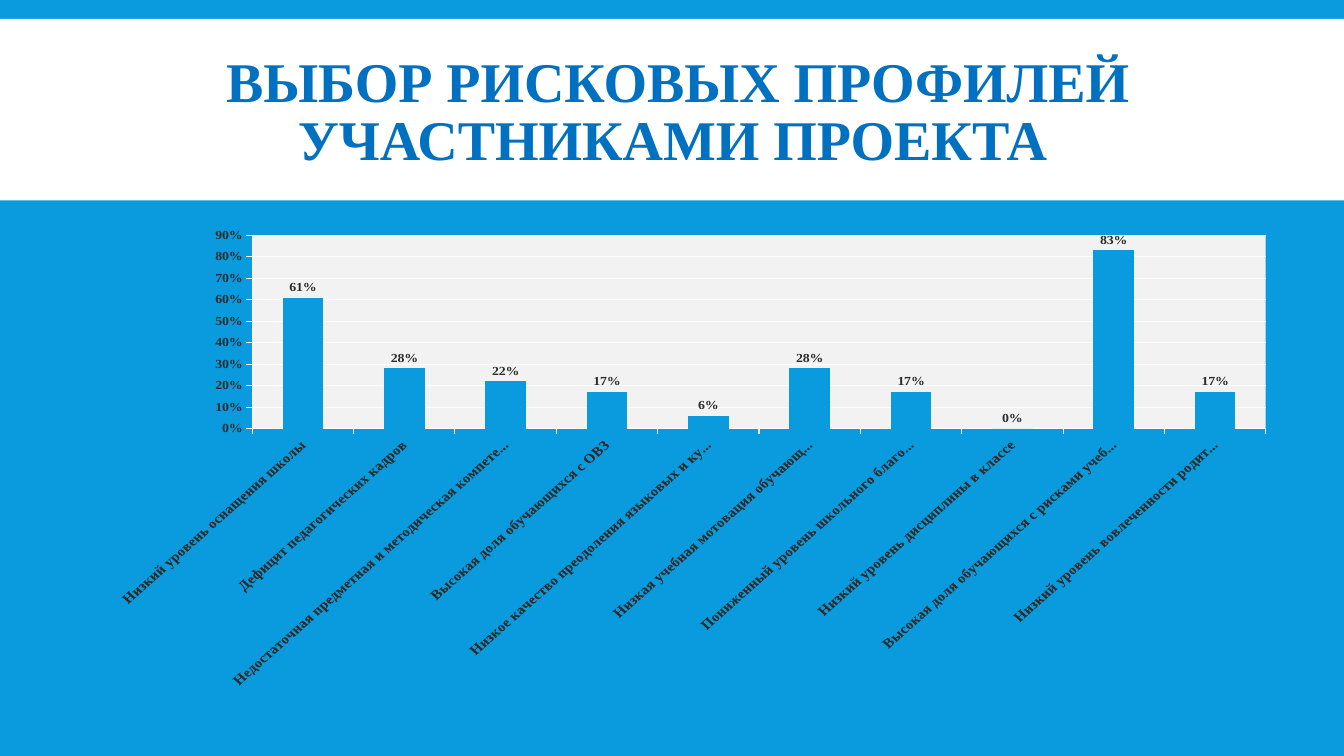
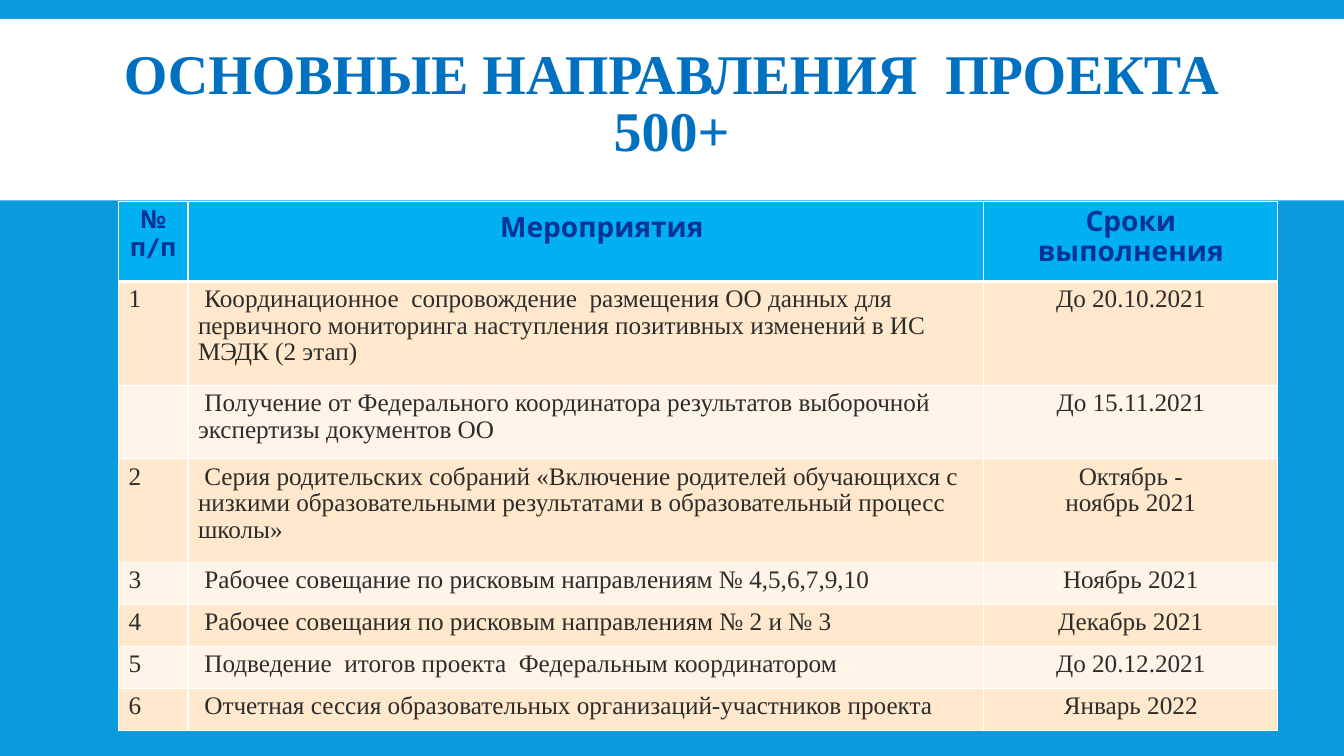
from dataclasses import dataclass
from typing import Any, NamedTuple

from lxml.etree import SubElement
from pptx import Presentation
from pptx.chart.data import CategoryChartData
from pptx.dml.color import RGBColor as Rgb
from pptx.enum.chart import XL_CHART_TYPE as ChartType
from pptx.enum.chart import XL_LABEL_POSITION as LabelPosition
from pptx.enum.chart import XL_TICK_MARK as TickMark
from pptx.enum.shapes import MSO_SHAPE as Preset
from pptx.enum.text import MSO_ANCHOR as Anchor
from pptx.enum.text import PP_ALIGN as Align
from pptx.oxml import parse_xml
from pptx.oxml.ns import nsdecls, qn
from pptx.util import Emu, Pt

EMU_PER_PX = 9525
BLANK_LAYOUT = 6


@dataclass(frozen=True)
class Theme:
    blue: str = "099BDD"
    white: str = "FFFFFF"
    title: str = "0070C0"
    ink: str = "2C2C2C"
    plot: str = "F2F2F2"
    header_fill: str = "00B0F0"
    header_ink: str = "003399"
    bands: tuple[str, str] = ("FFE8CC", "FFF4E7")
    serif: str = "Times New Roman"
    sans: str = "Cabin"
    title_size: int = 40
    heading_size: int = 20
    body_size: int = 18
    category_size: int = 11
    chart_size: int = 10
    title_spacing: float = 0.85
    header_spacing: float = 0.9
    body_spacing: float = 0.95


class Box(NamedTuple):
    left: int
    top: int
    width: int
    height: int


class Risk(NamedTuple):
    name: str
    share: float


class Activity(NamedTuple):
    number: str
    task: str
    term: str


class Heading(NamedTuple):
    text: str
    size: int
    margins: dict[str, int]


THEME = Theme()
SLIDE = Box(0, 0, 1280, 720)
BAND = Box(0, 18, 1280, 173)
CHART = Box(113, 200, 1093, 455)
TABLE = Box(113, 192, 1104, 504)
COLUMN_WIDTHS = (66, 758, 280)
ROW_HEIGHTS = (76, 99, 70, 99, 40, 40, 40, 40)
TASK_INDENT = 6
PLOT_LAYOUT = {"x": 0.11, "y": 0.06, "w": 0.89, "h": 0.46}

RISKS = (
    Risk("Низкий уровень оснащения школы", 0.61),
    Risk("Дефицит педагогических кадров", 0.28),
    Risk("Недостаточная предметная и методическая компетентность "
         "педагогических работников", 0.22),
    Risk("Высокая доля обучающихся с ОВЗ", 0.17),
    Risk("Низкое качество преодоления языковых и культурных барьеров", 0.06),
    Risk("Низкая учебная мотовация обучающихся", 0.28),
    Risk("Пониженный уровень школьного благополучия", 0.17),
    Risk("Низкий уровень дисциплины в классе", 0),
    Risk("Высокая доля обучающихся с рисками учебной неуспешности", 0.83),
    Risk("Низкий уровень вовлеченности родителей", 0.17),
)

HEADINGS = (
    Heading("№ п/п", THEME.body_size, {}),
    Heading("Мероприятия", THEME.heading_size,
            {"margin_left": 40, "margin_top": 11}),
    Heading("Сроки выполнения", THEME.heading_size, {}),
)

ACTIVITIES = (
    Activity("1", "Координационное  сопровождение  размещения ОО данных для "
             "первичного мониторинга наступления позитивных изменений в ИС "
             "МЭДК (2 этап)", "До 20.10.2021"),
    Activity("", "Получение от Федерального координатора результатов "
             "выборочной экспертизы документов ОО", "До 15.11.2021"),
    Activity("2", "Серия родительских собраний «Включение родителей "
             "обучающихся с низкими образовательными результатами в "
             "образовательный процесс школы»", "Октябрь -\nноябрь 2021"),
    Activity("3", "Рабочее совещание по рисковым направлениям № 4,5,6,7,9,10",
             "Ноябрь 2021"),
    Activity("4", "Рабочее совещания по рисковым направлениям № 2 и № 3",
             "Декабрь 2021"),
    Activity("5", "Подведение  итогов проекта  Федеральным координатором",
             "До 20.12.2021"),
    Activity("6", "Отчетная сессия образовательных организаций-участников "
             "проекта", "Январь 2022"),
)


def px(length: int) -> Emu:
    return Emu(length * EMU_PER_PX)


def place(box: Box) -> tuple[Emu, ...]:
    return tuple(px(length) for length in box)


def apply_format(target: Any, values: dict[str, Any]) -> None:
    for name, value in values.items():
        setattr(target, name, value)


def paint(fill: Any, color: str) -> None:
    fill.solid()
    fill.fore_color.rgb = Rgb.from_string(color)


def style_font(font: Any, name: str, size: int, color: str,
               bold: bool = False) -> None:
    apply_format(font, {"name": name, "size": Pt(size), "bold": bold})
    paint(font.fill, color)


def add_page(deck: Any, title: str, title_box: Box, indent: int = 0) -> Any:
    """Add a blue slide with the white band and its title."""
    page = deck.slides.add_slide(deck.slide_layouts[BLANK_LAYOUT])
    paint(page.background.fill, THEME.blue)
    band = page.shapes.add_shape(Preset.RECTANGLE, *place(BAND))
    band.shadow.inherit = False
    paint(band.fill, THEME.white)
    band.line.fill.background()

    frame = page.shapes.add_textbox(*place(title_box)).text_frame
    apply_format(frame, {"word_wrap": True, "vertical_anchor": Anchor.MIDDLE})
    para = frame.paragraphs[0]
    apply_format(para, {"alignment": Align.CENTER,
                        "line_spacing": THEME.title_spacing})
    set_indent(para, indent)
    span = para.add_run()
    span.text = title
    style_font(span.font, THEME.serif, THEME.title_size, THEME.title, True)
    return page


def set_indent(para: Any, indent: int) -> None:
    if indent:
        properties = para._p.get_or_add_pPr()
        properties.set("marL", "0")
        properties.set("indent", str(px(indent)))


def style_plot_area(chart: Any) -> None:
    """Fix the inner plot position and give the plot its own fill."""
    area = chart._chartSpace.chart.plotArea
    for old_layout in area.findall(qn("c:layout")):
        area.remove(old_layout)
    sizes = "".join(f'<c:{key} val="{value}"/>'
                    for key, value in PLOT_LAYOUT.items())
    area.insert(0, parse_xml(
        f'<c:layout {nsdecls("c")}><c:manualLayout>'
        '<c:layoutTarget val="inner"/>'
        '<c:xMode val="edge"/><c:yMode val="edge"/>'
        f'{sizes}</c:manualLayout></c:layout>'))
    area.append(parse_xml(
        f'<c:spPr {nsdecls("c", "a")}><a:solidFill>'
        f'<a:srgbClr val="{THEME.plot}"/></a:solidFill></c:spPr>'))


def style_axis(axis: Any, size: int) -> None:
    apply_format(axis, {"major_tick_mark": TickMark.OUTSIDE,
                        "minor_tick_mark": TickMark.NONE})
    paint(axis.format.line.fill, THEME.white)
    style_font(axis.tick_labels.font, THEME.serif, size, THEME.ink, True)


def add_risk_chart(page: Any) -> None:
    chart_data = CategoryChartData(number_format="0%")
    chart_data.categories = [risk.name for risk in RISKS]
    chart_data.add_series("Series 1", [risk.share for risk in RISKS])
    chart = page.shapes.add_chart(
        ChartType.COLUMN_CLUSTERED, *place(CHART), chart_data).chart
    apply_format(chart, {"has_legend": False, "has_title": False})
    style_font(chart.font, THEME.sans, THEME.chart_size, THEME.white)
    style_plot_area(chart)

    style_axis(chart.category_axis, THEME.category_size)
    body = chart.category_axis._element.find(
        f'{qn("c:txPr")}/{qn("a:bodyPr")}')
    body.set("rot", "-2700000")
    body.set("vert", "horz")

    value_axis = chart.value_axis
    style_axis(value_axis, THEME.chart_size)
    apply_format(value_axis, {"minimum_scale": 0, "maximum_scale": 0.9,
                              "major_unit": 0.1, "has_major_gridlines": True})
    apply_format(value_axis.tick_labels, {"number_format": "0%",
                                          "number_format_is_linked": False})
    paint(value_axis.major_gridlines.format.line.fill, THEME.white)

    plot = chart.plots[0]
    apply_format(plot, {"gap_width": 150, "vary_by_categories": False,
                        "has_data_labels": True})
    paint(plot.series[0].format.fill, THEME.blue)
    labels = plot.data_labels
    apply_format(labels, {"show_value": True, "number_format": "0%",
                          "number_format_is_linked": False,
                          "position": LabelPosition.OUTSIDE_END})
    style_font(labels.font, THEME.serif, THEME.chart_size, THEME.ink, True)


def add_borders(cell: Any, row: int) -> None:
    """Draw white edges, thick between the header and the body."""
    properties = cell._tc.get_or_add_tcPr()
    thick = {(0, "B"), (1, "T")}
    for side in "LRTB":
        width = Pt(3 if (row, side) in thick else 1)
        edge = SubElement(properties, qn(f"a:ln{side}"), w=str(width))
        fill = SubElement(edge, qn("a:solidFill"))
        SubElement(fill, qn("a:srgbClr"), val=THEME.white)


def fill_cell(cell: Any, row: int, text: str, color: str,
              font: dict[str, Any], paragraph: dict[str, Any],
              indent: int = 0) -> None:
    add_borders(cell, row)
    paint(cell.fill, color)
    cell.text = text
    for para in cell.text_frame.paragraphs:
        apply_format(para, paragraph)
        set_indent(para, indent)
        style_font(para.font, **font)
        for span in para.runs:
            style_font(span.font, **font)


def add_activity_table(page: Any) -> None:
    table = page.shapes.add_table(
        len(ROW_HEIGHTS), len(COLUMN_WIDTHS), *place(TABLE)).table
    for column, width in zip(table.columns, COLUMN_WIDTHS):
        column.width = px(width)
    for line, height in zip(table.rows, ROW_HEIGHTS):
        line.height = px(height)

    for column, heading in enumerate(HEADINGS):
        cell = table.cell(0, column)
        fill_cell(cell, 0, heading.text, THEME.header_fill,
                  {"name": THEME.sans, "size": heading.size,
                   "color": THEME.header_ink, "bold": True},
                  {"alignment": Align.CENTER,
                   "line_spacing": THEME.header_spacing})
        apply_format(cell, {name: px(margin)
                            for name, margin in heading.margins.items()})

    body_font = {"name": THEME.serif, "size": THEME.body_size,
                 "color": THEME.ink}
    alignments = (Align.LEFT, Align.LEFT, Align.CENTER)
    indents = (0, TASK_INDENT, 0)
    for row, activity in enumerate(ACTIVITIES, start=1):
        color = THEME.bands[(row - 1) % 2]
        for column, text in enumerate(activity):
            fill_cell(table.cell(row, column), row, text, color, body_font,
                      {"alignment": alignments[column],
                       "line_spacing": THEME.body_spacing}, indents[column])


def main() -> None:
    deck = Presentation()
    apply_format(deck, {"slide_width": px(SLIDE.width),
                        "slide_height": px(SLIDE.height)})
    add_risk_chart(add_page(
        deck, "ВЫБОР РИСКОВЫХ ПРОФИЛЕЙ УЧАСТНИКАМИ ПРОЕКТА",
        Box(127, 30, 1027, 158), indent=10))
    add_activity_table(add_page(
        deck, "ОСНОВНЫЕ НАПРАВЛЕНИЯ  ПРОЕКТА 500+", Box(106, 10, 1067, 181)))
    deck.save("out.pptx")


if __name__ == "__main__":
    main()
